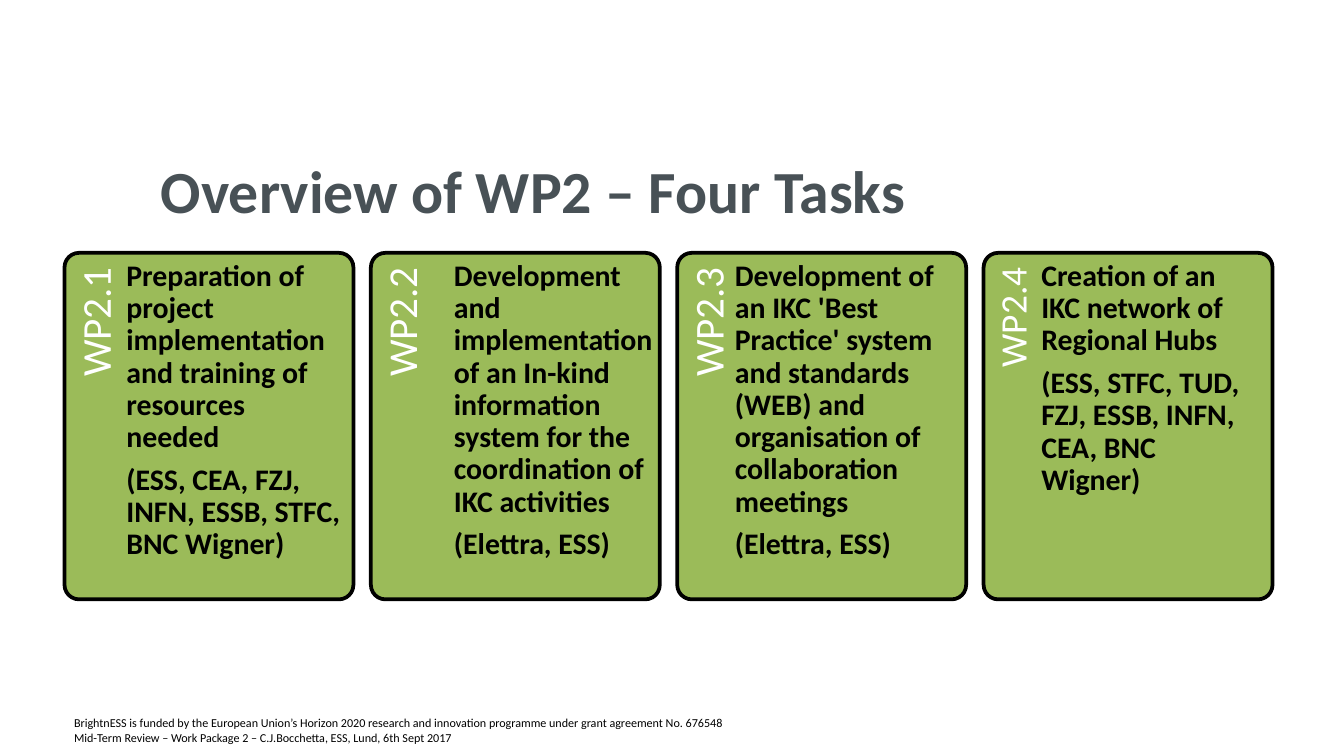
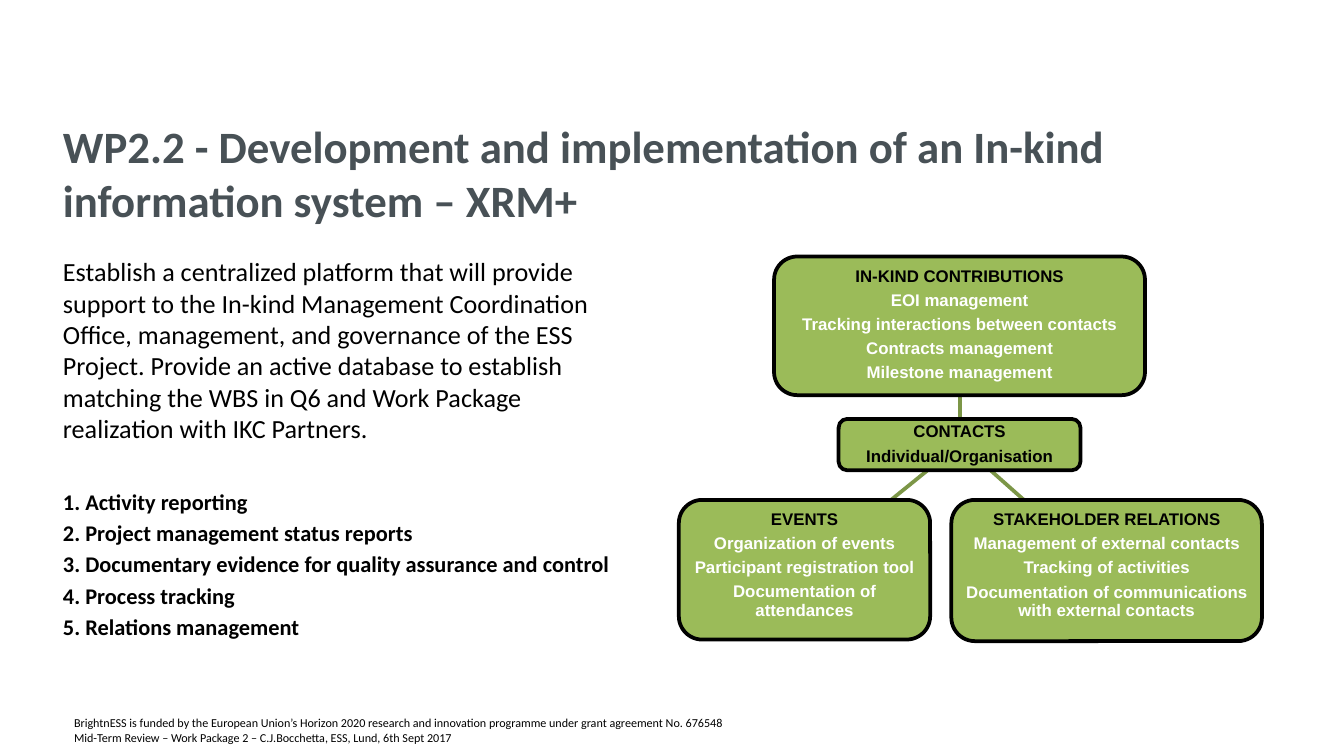
from dataclasses import dataclass

from lxml.etree import SubElement
from pptx import Presentation
from pptx.dml.color import RGBColor
from pptx.enum.shapes import MSO_CONNECTOR, MSO_SHAPE
from pptx.enum.text import MSO_ANCHOR, MSO_AUTO_SIZE, PP_ALIGN
from pptx.oxml.ns import qn
from pptx.util import Cm, Pt

GREEN = RGBColor(0x9B, 0xBB, 0x59)
DARK_GREEN = RGBColor(0x7C, 0x96, 0x47)
SLATE = RGBColor(0x48, 0x51, 0x56)
BLACK = RGBColor(0x00, 0x00, 0x00)
WHITE = RGBColor(0xFF, 0xFF, 0xFF)

CARD_LEFT, CARD_TOP, CARD_PITCH = 1.22, 4.78, 5.79
CARD_WIDTH, CARD_HEIGHT = 5.46, 6.55


@dataclass(frozen=True)
class Box:
    left: float
    top: float
    width: float
    height: float

    def lengths(self) -> tuple:
        return Cm(self.left), Cm(self.top), Cm(self.width), Cm(self.height)


@dataclass(frozen=True)
class Task:
    label: str
    text: str
    partners: str
    indent: float
    label_size: int = 22


@dataclass(frozen=True)
class Node:
    box: Box
    lines: tuple
    black_lines: int = 1
    anchor: MSO_ANCHOR = MSO_ANCHOR.TOP


@dataclass(frozen=True)
class Link:
    x1: float
    y1: float
    x2: float
    y2: float


TASKS = (
    Task("WP2.1", "Preparation of project implementation and training of resources needed",
         "(ESS, CEA, FZJ, INFN, ESSB, STFC, BNC Wigner)", 1.17),
    Task("WP2.2", "Development and implementation of an In-kind information system "
         "for the coordination of IKC activities", "(Elettra, ESS)", 1.57),
    Task("WP2.3", "Development of an IKC 'Best Practice' system and standards (WEB) "
         "and organisation of collaboration meetings", "(Elettra, ESS)", 1.09),
    Task("WP2.4", "Creation of an IKC network of Regional Hubs",
         "(ESS, STFC, TUD, FZJ, ESSB, INFN, CEA, BNC Wigner)", 1.09, 20),
)

NODES = (
    Node(Box(15.85, 7.92, 4.57, 0.97), ("CONTACTS", "Individual/Organisation"),
         2, MSO_ANCHOR.MIDDLE),
    Node(Box(14.63, 4.85, 7.01, 2.62),
         ("IN-KIND CONTRIBUTIONS", "EOI management", "Tracking interactions between contacts",
          "Contracts management", "Milestone management")),
    Node(Box(17.98, 9.45, 5.87, 2.67),
         ("STAKEHOLDER RELATIONS", "Management of external contacts", "Tracking of activities",
          "Documentation of communications with external contacts")),
    Node(Box(12.83, 9.45, 4.75, 2.64),
         ("EVENTS", "Organization of events", "Participant registration tool",
          "Documentation of attendances")),
)

LINKS = (
    Link(18.14, 7.92, 18.14, 7.47),
    Link(18.72, 8.89, 19.35, 9.45),
    Link(17.53, 8.89, 16.84, 9.45),
)

FOOTER = (
    "BrightnESS is funded by the European Union’s Horizon 2020 research and innovation "
    "programme under grant agreement No. 676548",
    "Mid-Term Review – Work Package 2 – C.J.Bocchetta, ESS, Lund, 6th Sept 2017",
)

PURPOSE = (
    "Establish a centralized platform that will provide support to the In-kind Management "
    "Coordination Office, management, and governance of the ESS Project. Provide an active "
    "database to establish matching the WBS in Q6 and Work Package realization with IKC Partners.",
)

FEATURES = (
    "1. Activity reporting",
    "2. Project management status reports",
    "3. Documentary evidence for quality assurance and control",
    "4. Process tracking",
    "5. Relations management",
)


def write(tf, lines, *, size, font="Calibri", color=BLACK, bold=False, align=PP_ALIGN.LEFT,
          anchor=MSO_ANCHOR.TOP, insets=(0.25, 0.13, 0.25, 0.13), spacing=1.0,
          before=0.0, after=0.0, lead_color=None, leads=0) -> None:
    tf.word_wrap = True
    tf.auto_size = MSO_AUTO_SIZE.NONE
    tf.vertical_anchor = anchor
    tf.margin_left, tf.margin_top, tf.margin_right, tf.margin_bottom = map(Cm, insets)
    for i, line in enumerate(lines):
        p = tf.paragraphs[0] if i == 0 else tf.add_paragraph()
        pPr = p._p.get_or_add_pPr()
        pPr.set("marL", "0")
        pPr.set("indent", "0")
        SubElement(pPr, qn("a:buNone"))
        p.alignment = align
        p.line_spacing = spacing
        p.space_before = Pt(before if i else 0)
        p.space_after = Pt(after)
        r = p.add_run()
        r.text = line
        r.font.name = font
        r.font.size = Pt(size)
        r.font.bold = bold
        r.font.color.rgb = lead_color if i < leads else color


def place(sp, box: Box) -> None:
    sp.left, sp.top, sp.width, sp.height = box.lengths()


def set_title(slide, text: str, box: Box, size: int) -> None:
    place(slide.shapes.title, box)
    write(slide.shapes.title.text_frame, (text,), size=size, color=SLATE, bold=True,
          anchor=MSO_ANCHOR.MIDDLE)


def add_panel(shapes, box: Box):
    sp = shapes.add_shape(MSO_SHAPE.ROUNDED_RECTANGLE, *box.lengths())
    sp.shadow.inherit = False
    sp.fill.solid()
    sp.fill.fore_color.rgb = GREEN
    sp.line.color.rgb = BLACK
    sp.line.width = Pt(2)
    return sp


def add_card(slide, task: Task, left: float) -> None:
    shapes = slide.shapes.add_group_shape().shapes
    panel = add_panel(shapes, Box(left, CARD_TOP, CARD_WIDTH, CARD_HEIGHT))
    panel.adjustments[0] = 0.05
    label = shapes.add_textbox(*Box(left - 2.13, 6.91, 5.36, 1.09).lengths())
    label.rotation = 270
    write(label.text_frame, (task.label,), size=task.label_size, color=WHITE,
          align=PP_ALIGN.RIGHT, insets=(0, 0.2, 0.28, 0), spacing=0.9)
    body = shapes.add_textbox(*Box(left + task.indent, CARD_TOP, 4.06, CARD_HEIGHT).lengths())
    write(body.text_frame, (task.text, task.partners), size=16, bold=True,
          insets=(0, 0.15, 0, 0), spacing=0.9, after=5.6)


def add_node(slide, node: Node) -> None:
    sp = add_panel(slide.shapes, node.box)
    write(sp.text_frame, node.lines, size=9, font="Arial", color=WHITE, bold=True,
          align=PP_ALIGN.CENTER, anchor=node.anchor, insets=(0.08,) * 4, spacing=0.9,
          after=3.2, lead_color=BLACK, leads=node.black_lines)


def add_link(slide, link: Link) -> None:
    line = slide.shapes.add_connector(MSO_CONNECTOR.STRAIGHT, Cm(link.x1), Cm(link.y1),
                                      Cm(link.x2), Cm(link.y2))
    line.line.color.rgb = DARK_GREEN
    line.line.width = Pt(2)
    SubElement(line._element.spPr, qn("a:effectLst"))


def add_master_footer(prs, slide) -> None:
    sp = slide.shapes.add_textbox(*Box(1.4, 13.39, 14.48, 0.69).lengths())
    write(sp.text_frame, FOOTER, size=6.5, insets=(0, 0.13, 0.25, 0.13), spacing=Pt(8))
    prs.slide_master.shapes.element.append(sp.element)


def build_overview(prs):
    slide = prs.slides.add_slide(prs.slide_layouts.get_by_name("Title Only"))
    set_title(slide, "Overview of WP2 – Four Tasks", Box(2.79, 2.39, 21.56, 2.39), 32)
    for i, task in enumerate(TASKS):
        add_card(slide, task, CARD_LEFT + i * CARD_PITCH)
    return slide


def build_system(prs) -> None:
    slide = prs.slides.add_slide(prs.slide_layouts.get_by_name("Two Content"))
    set_title(slide, "WP2.2 - Development and implementation of an In-kind "
              "information system – XRM+", Box(0.94, 2.06, 23.37, 2.39), 24)
    purpose, features = slide.placeholders[1], slide.placeholders[2]
    place(purpose, Box(0.94, 4.7, 11.35, 3.91))
    write(purpose.text_frame, PURPOSE, size=14)
    place(features, Box(0.94, 9.09, 11.35, 3.3))
    write(features.text_frame, FEATURES, size=12, bold=True, before=2.4)
    for link in LINKS:
        add_link(slide, link)
    for node in NODES:
        add_node(slide, node)


def main() -> None:
    prs = Presentation()
    prs.slide_width, prs.slide_height = Cm(25.4), Cm(14.29)
    overview = build_overview(prs)
    add_master_footer(prs, overview)
    build_system(prs)
    prs.save("out.pptx")


if __name__ == "__main__":
    main()
